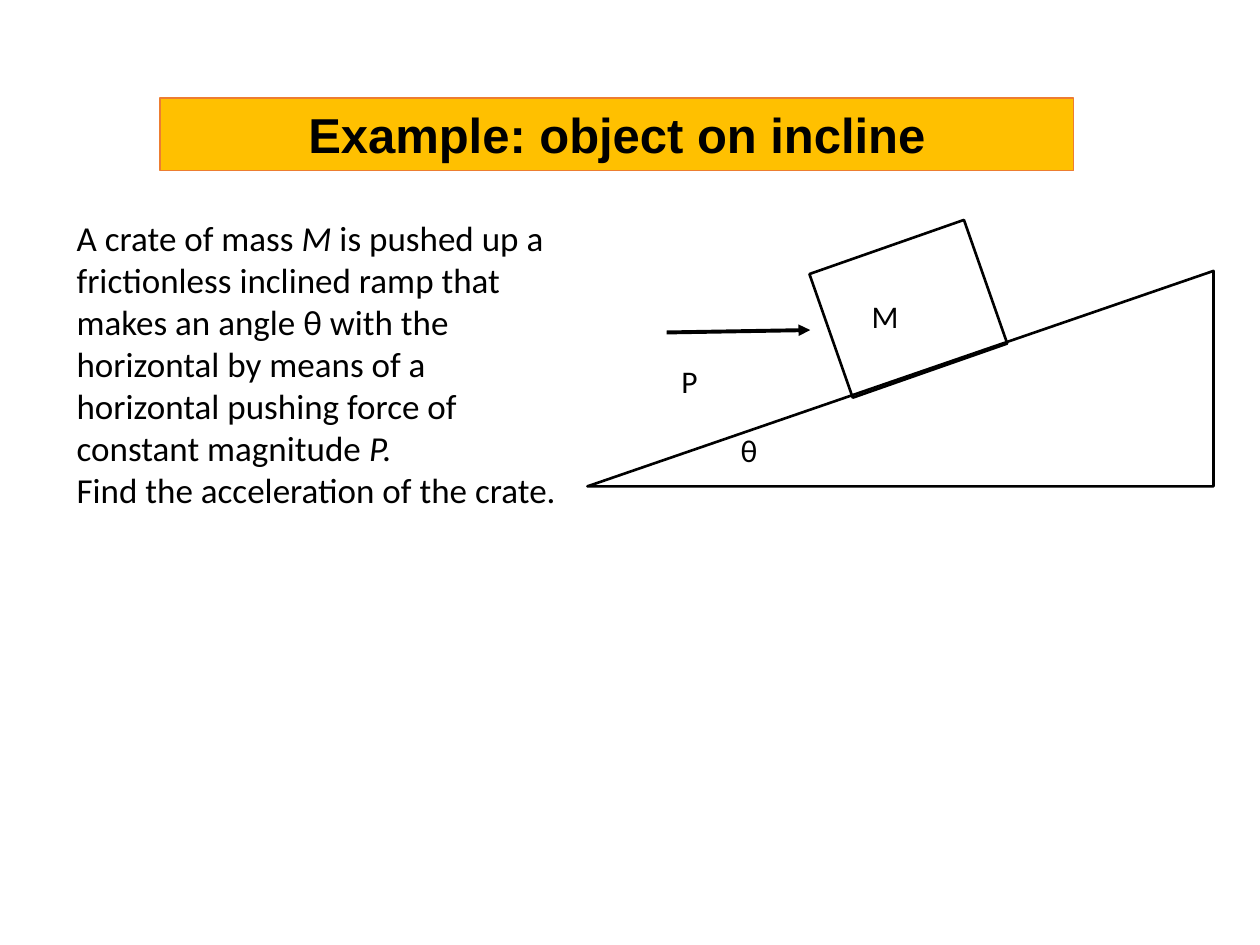
"""Build a slide posing the problem of a crate pushed up an incline."""
import pptx
import pptx.dml.color
import pptx.enum.shapes
import pptx.enum.text
import pptx.oxml
import pptx.oxml.ns
import pptx.util

Pt = pptx.util.Pt
RGB = pptx.dml.color.RGBColor.from_string
SHAPE = pptx.enum.shapes.MSO_SHAPE
ALIGN = pptx.enum.text.PP_ALIGN
ANCHOR = pptx.enum.text.MSO_ANCHOR
qn = pptx.oxml.ns.qn

THEME = {
    "ink": RGB("000000"), "paper": RGB("FFFFFF"),
    "banner": RGB("FFC000"), "border": RGB("ED7D31"),
    "heading": "Arial", "body": "Calibri",
    "title_size": 28, "body_size": 20, "label_size": 18,
}


def write(sp, text, size, font=THEME["body"], bold=False, align=ALIGN.LEFT,
          anchor=ANCHOR.TOP, spacing=1.0):
    """Fill a shape with text, one paragraph a line, with *italic* spans."""
    tf = sp.text_frame
    tf.word_wrap = True
    tf.auto_size = pptx.enum.text.MSO_AUTO_SIZE.NONE
    tf.vertical_anchor = anchor
    for i, line in enumerate(text.split("\n")):
        p = tf.add_paragraph() if i else tf.paragraphs[0]
        p.alignment = align
        p.line_spacing = spacing
        for j, part in enumerate(line.split("*")):
            if part:
                r = p.add_run()
                r.text = part
                r.font.name, r.font.size = font, Pt(size)
                r.font.bold, r.font.italic = bold, j % 2 == 1
                r.font.color.rgb = THEME["ink"]


prs = pptx.Presentation()
prs.slide_width, prs.slide_height = Pt(720), Pt(540)
s = prs.slides.add_slide(prs.slide_layouts[5])

title = s.shapes.title
title.left, title.top, title.width, title.height = Pt(91.5), Pt(56), Pt(522), Pt(41.5)
title.fill.solid()
title.fill.fore_color.rgb = THEME["banner"]
title.line.color.rgb = THEME["border"]
title.line.width = Pt(0.75)
write(title, "Example: object on incline", THEME["title_size"], font=THEME["heading"],
      bold=True, align=ALIGN.CENTER, anchor=ANCHOR.MIDDLE)

problem = s.shapes.add_textbox(Pt(36.7), Pt(120.2), Pt(294), Pt(177))
write(problem, "A crate of mass *M* is pushed up a frictionless inclined ramp that makes "
      "an angle θ with the horizontal by means of a horizontal pushing force of "
      "constant magnitude *P.*\nFind the acceleration of the crate.", THEME["body_size"])

diagram = s.shapes.add_group_shape().shapes

labels = [("θ", 416.2, 241.2, 40.3, 36.7), ("M", 491, 164.9, 47.5, 36.7),
          ("P", 382.3, 201.6, 40.3, 39.6)]
for text, x, y, w, h in labels:
    sp = diagram.add_shape(SHAPE.RECTANGLE, Pt(x), Pt(y), Pt(w), Pt(h))
    sp.shadow.inherit = False
    sp.fill.solid()
    sp.fill.fore_color.rgb = THEME["paper"]
    sp.line.fill.background()
    write(sp, text, THEME["label_size"], spacing=1.07)

ramp = diagram.add_shape(SHAPE.RIGHT_TRIANGLE, Pt(335.7), Pt(154.8), Pt(357.8), Pt(123.1))
ramp._element.spPr.find(qn("a:xfrm")).set("flipH", "1")
crate = diagram.add_shape(SHAPE.RECTANGLE, Pt(472.3), Pt(139), Pt(93.6), Pt(74.9))
crate.rotation = 340.7
for sp in (ramp, crate):
    sp.shadow.inherit = False
    sp.fill.background()
    sp.line.color.rgb = THEME["ink"]
    sp.line.width = Pt(1.5)

push = diagram.add_connector(pptx.enum.shapes.MSO_CONNECTOR.STRAIGHT,
                             Pt(381), Pt(190), Pt(463), Pt(188.6))
push.line.color.rgb = THEME["ink"]
push.line.width = Pt(2.25)
ln = push.line._get_or_add_ln()
ln.append(pptx.oxml.parse_xml(
    f'<a:tailEnd {pptx.oxml.ns.nsdecls("a")} type="triangle"/>'))
push._element.spPr.append(pptx.oxml.parse_xml(
    f'<a:effectLst {pptx.oxml.ns.nsdecls("a")}/>'))

prs.save("out.pptx")
